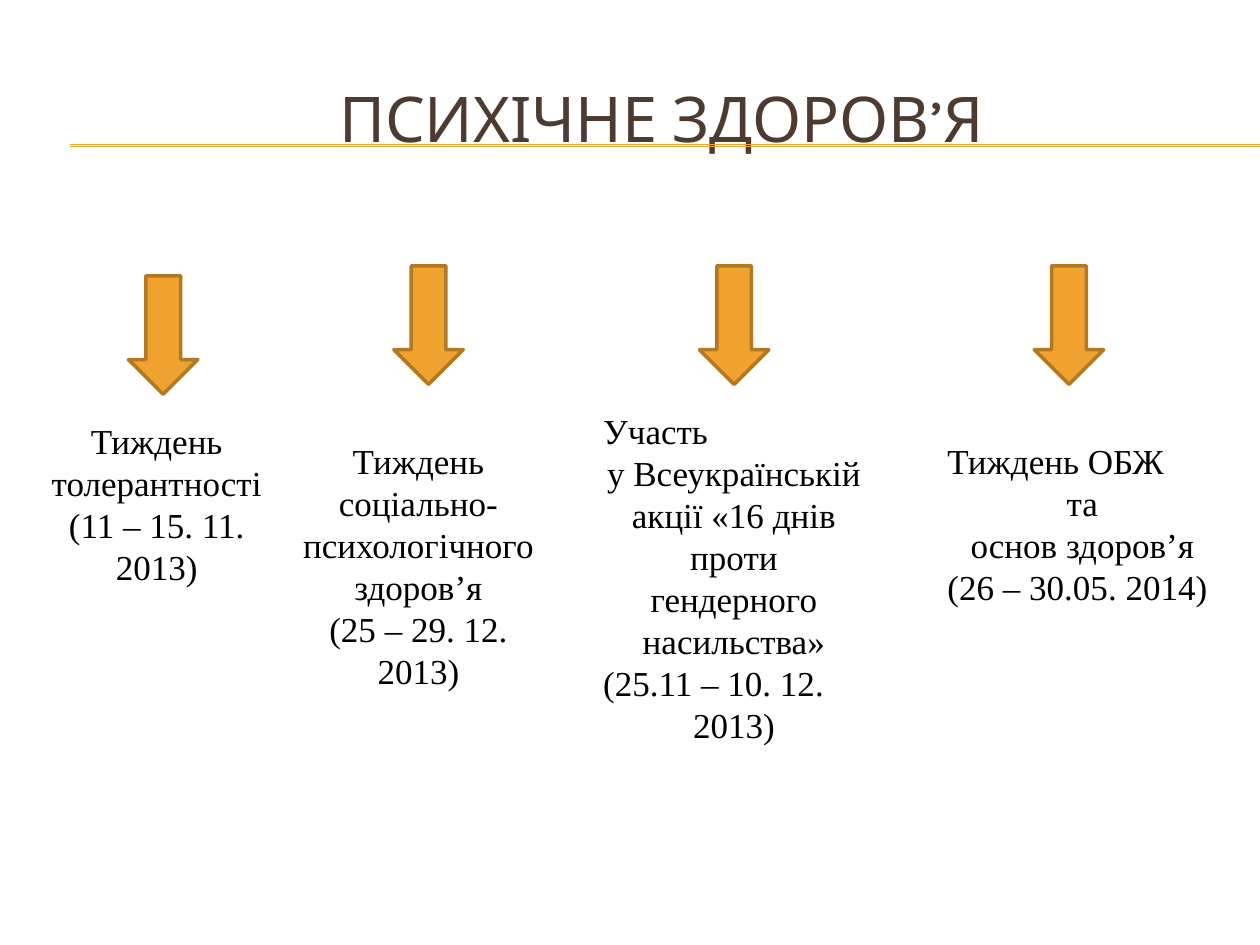
from lxml.etree import SubElement
from pptx import Presentation
from pptx.dml.color import RGBColor
from pptx.enum.shapes import MSO_CONNECTOR, MSO_SHAPE
from pptx.enum.text import MSO_ANCHOR, MSO_AUTO_SIZE, PP_ALIGN
from pptx.oxml.ns import qn
from pptx.util import Cm, Pt

ORANGE, BROWN, TITLE_BROWN, BLACK = "F0A22E", "B27822", "4E3B30", "000000"
LEFT, CENTER = PP_ALIGN.LEFT, PP_ALIGN.CENTER
TITLE = "ПСИХІЧНЕ ЗДОРОВ’Я"

# Lengths in centimetres: arrow (left, top), text box (left, top, width, height)
EVENTS = [
    {"arrow": (2.59, 5.56), "box": (0.58, 8.33, 5.16, 3.63),
     "lines": [("Тиждень толерантності", CENTER), ("(11 – 15. 11. 2013)", CENTER)]},
    {"arrow": (7.94, 5.36), "box": (5.77, 8.74, 5.33, 5.33),
     "lines": [("Тиждень соціально-психологічного здоров’я", CENTER),
               ("(25 – 29. 12. 2013)", CENTER)]},
    {"arrow": (14.1, 5.36), "box": (11.91, 8.13, 5.77, 7.04),
     "lines": [("Участь", LEFT),
               ("у Всеукраїнській акції «16 днів проти гендерного насильства»", CENTER),
               ("(25.11 – 10. 12.", LEFT), ("2013)", CENTER)]},
    {"arrow": (20.85, 5.36), "box": (18.85, 8.74, 5.94, 3.63),
     "lines": [("Тиждень ОБЖ", LEFT), ("та", CENTER), ("основ здоров’я", CENTER),
               ("(26 – 30.05. 2014)", LEFT)]},
]
ARROW_SIZE = (1.4, 2.39)
RULE_LEFT, RULE_TOPS = 1.42, (2.92, 2.95)


def color(hex_code):
    return RGBColor.from_string(hex_code)


def format_paragraph(paragraph, alignment, font_name, size, hex_code):
    paragraph.alignment = alignment
    for run in paragraph.runs:
        run.font.name = font_name
        run.font.size = Pt(size)
        run.font.color.rgb = color(hex_code)


def add_rule(slide, top, right):
    rule = slide.shapes.add_connector(
        MSO_CONNECTOR.STRAIGHT, Cm(RULE_LEFT), Cm(top), right, Cm(top))
    rule.line.color.rgb = color(ORANGE)
    rule.line.width = Pt(0.75)
    SubElement(rule._element.spPr, qn("a:effectLst"))


def add_title(slide):
    title = slide.shapes.title
    title.left, title.top, title.width, title.height = Cm(1.27), Cm(1.19), Cm(24.13), Cm(2.34)
    title.text_frame.text = TITLE
    title.text_frame.vertical_anchor = MSO_ANCHOR.MIDDLE
    format_paragraph(title.text_frame.paragraphs[0], CENTER, "Karla", 36, TITLE_BROWN)


def add_arrow(slide, position):
    arrow = slide.shapes.add_shape(
        MSO_SHAPE.DOWN_ARROW, *map(Cm, position + ARROW_SIZE))
    arrow.shadow.inherit = False
    arrow.fill.solid()
    arrow.fill.fore_color.rgb = color(ORANGE)
    arrow.line.color.rgb = color(BROWN)
    arrow.line.width = Pt(2)


def add_event_text(slide, box, lines):
    text_frame = slide.shapes.add_textbox(*map(Cm, box)).text_frame
    text_frame.word_wrap = True
    text_frame.auto_size = MSO_AUTO_SIZE.SHAPE_TO_FIT_TEXT
    text_frame.text = "\n".join(text for text, _ in lines)
    for paragraph, (_, alignment) in zip(text_frame.paragraphs, lines):
        paragraph.line_spacing = Pt(24)
        format_paragraph(paragraph, alignment, "Times New Roman", 20, BLACK)


def main():
    presentation = Presentation()
    presentation.slide_width, presentation.slide_height = Cm(25.4), Cm(19.05)
    slide = presentation.slides.add_slide(presentation.slide_layouts[5])
    add_title(slide)
    for top in RULE_TOPS:
        add_rule(slide, top, presentation.slide_width)
    for event in EVENTS:
        add_arrow(slide, event["arrow"])
        add_event_text(slide, event["box"], event["lines"])
    presentation.save("out.pptx")


if __name__ == "__main__":
    main()
